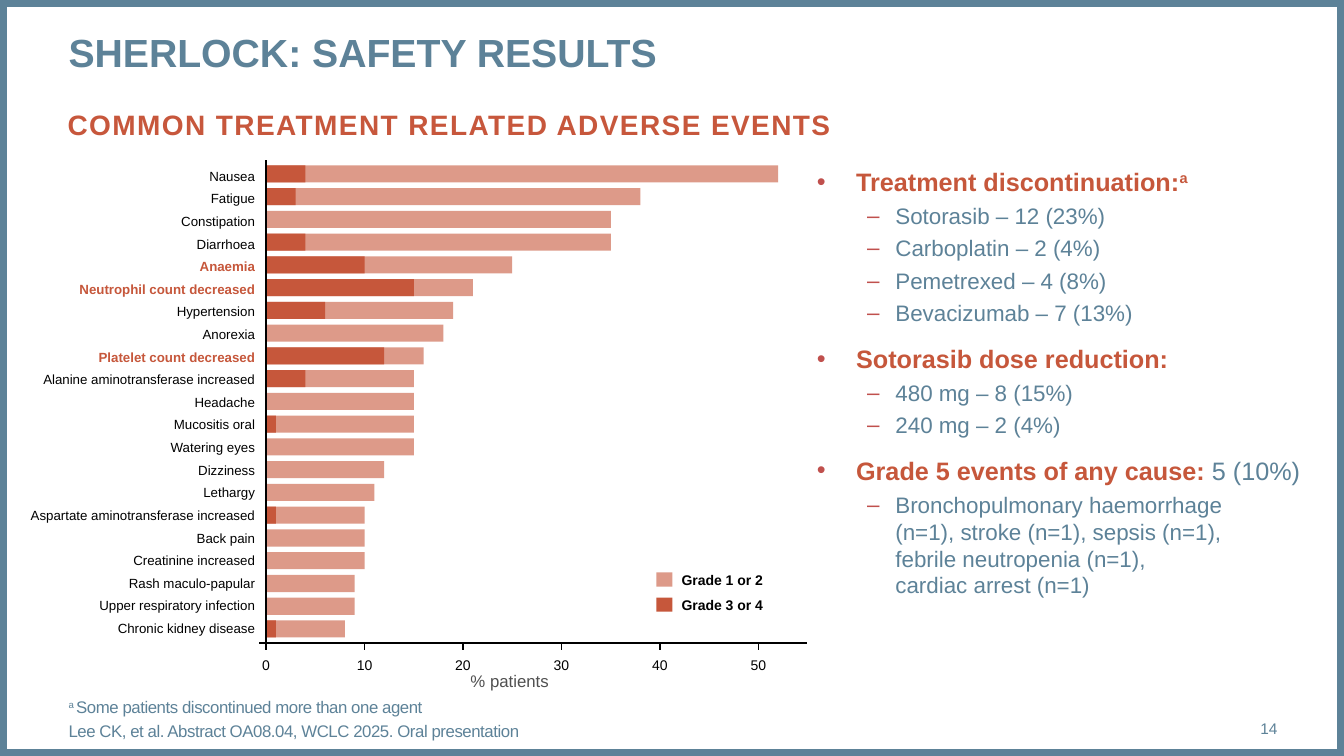
from lxml.etree import SubElement
from pptx import Presentation
from pptx.dml.color import RGBColor
from pptx.enum.shapes import MSO_CONNECTOR as Link, MSO_SHAPE as Shape
from pptx.enum.text import MSO_ANCHOR as Anchor, PP_ALIGN as Align
from pptx.oxml.ns import qn
from pptx.util import Inches, Pt

BLUE = RGBColor(0x5D, 0x82, 0x98)
RUST = RGBColor(0xC7, 0x57, 0x3C)
DARK = RGBColor(0xC6, 0x57, 0x3B)
PALE = RGBColor(0xDD, 0x9A, 0x89)
BLACK = RGBColor(0, 0, 0)
GREY = RGBColor(0x50, 0x50, 0x50)
BULLET = "C0504D"
FONT = "Arial"

# event, all grades, grade 3 or 4 (% of patients)
EVENTS = [
    ("Nausea", 52, 4),
    ("Fatigue", 38, 3),
    ("Constipation", 35, 0),
    ("Diarrhoea", 35, 4),
    ("Anaemia", 25, 10),
    ("Neutrophil count decreased", 21, 15),
    ("Hypertension", 19, 6),
    ("Anorexia", 18, 0),
    ("Platelet count decreased", 16, 12),
    ("Alanine aminotransferase increased", 15, 4),
    ("Headache", 15, 0),
    ("Mucositis oral", 15, 1),
    ("Watering eyes", 15, 0),
    ("Dizziness", 12, 0),
    ("Lethargy", 11, 0),
    ("Aspartate aminotransferase increased", 10, 1),
    ("Back pain", 10, 0),
    ("Creatinine increased", 10, 0),
    ("Rash maculo-papular", 9, 0),
    ("Upper respiratory infection", 9, 0),
    ("Chronic kidney disease", 8, 1),
]
SEVERE = 10  # events with at least this share of grade 3 or 4 stand out
GRADES = [("Grade 1 or 2", PALE), ("Grade 3 or 4", DARK)]
TICKS = range(0, 60, 10)

HEAD = {"size": 18, "color": DARK, "bold": True}
ITEM = {"size": 16, "color": BLUE}
NOTE = {"size": 12, "color": BLUE, "spc": -30}
POINTS = [
    ([("Treatment discontinuation:", HEAD), ("a", {**HEAD, "base": 30000})],
     ["Sotorasib – 12 (23%)", "Carboplatin – 2 (4%)", "Pemetrexed – 4 (8%)", "Bevacizumab – 7 (13%)"]),
    ([("Sotorasib dose reduction:", HEAD)],
     ["480 mg – 8 (15%)", "240 mg – 2 (4%)"]),
    ([("Grade 5 events of any cause: ", HEAD), ("5 (10%)", {"size": 18, "color": BLUE})],
     ["Bronchopulmonary haemorrhage\v(n=1), stroke (n=1), sepsis (n=1),\v"
      "febrile neutropenia (n=1),\vcardiac arrest (n=1)"]),
]
NOTES = [
    [("a ", {**NOTE, "base": 30000}), ("Some patients discontinued more than one agent", NOTE)],
    [("Lee CK, et al. Abstract OA08.04, WCLC 2025. Oral presentation", NOTE)],
]

# left, top, width, height in percent of the slide
TITLE = (5.1, 3.73, 89.9, 12.53)
SUB = (5.03, 14.27, 90, 10.27)
LIST = (60.77, 22, 36.23, 67.6)
FOOT = (5.1, 92.67, 83.5, 5.33)
PAGE = (88.6, 93.73, 6.45, 5.33)
NAMES = (2.18, 21.33, 16.8, 63.6)
UNIT = (34.21, 88, 7.43, 4)
# bars: zero line, width of one percent, first top, row step, height
ZERO, ONE, TOP, STEP, BAR = 19.8, 0.73, 21.87, 3.01, 2.27
ONE = 38.1 / 52
AXIS_Y, TICK_Y, NUM_Y = 85.07, 86, 86.8
AXIS_X, AXIS_END, AXIS_TOP = 19.28, 60.02, 21.2
DIGIT, LINE = 0.57, 2.8
KEY_X, KEY_Y, KEY_STEP = 48.84, 75.73, 3.33

prs = Presentation()
prs.slide_width, prs.slide_height = Inches(13.33), Inches(7.5)
slide = prs.slides.add_slide(prs.slide_layouts[6])
shapes = slide.shapes


def place(box):
    """Turn percent of the slide into lengths."""
    sizes = (prs.slide_width, prs.slide_height) * 2
    return [int(part * size / 100) for part, size in zip(box, sizes)]


def style(run, size, color, bold=False, base=None, spc=None):
    font = run.font
    font.name, font.size, font.bold = FONT, Pt(size), bold
    font.color.rgb = color
    props = run._r.get_or_add_rPr()
    for key, value in (("baseline", base), ("spc", spc)):
        if value is not None:
            props.set(key, str(value))


def add(kind, box, fill=None):
    """Add a preset shape without outline."""
    shape = shapes.add_shape(kind, *place(box))
    shape.shadow.inherit = False
    shape.line.fill.background()
    if fill is None:
        shape.fill.background()
    else:
        shape.fill.solid()
        shape.fill.fore_color.rgb = fill
    return shape


def write(box, lines, align=Align.LEFT, anchor=Anchor.TOP, label=False):
    """Add text; each line is a list of (text, style) pairs. A label does not wrap."""
    if label:
        shape = add(Shape.ROUNDED_RECTANGLE, box)
        shape.adjustments[0] = 0
    else:
        shape = shapes.add_textbox(*place(box))
    frame = shape.text_frame
    frame.word_wrap, frame.vertical_anchor = not label, anchor
    frame.margin_left = frame.margin_right = frame.margin_top = frame.margin_bottom = 0
    frame.text = "\n".join("".join(text for text, _ in line) for line in lines)
    for para, line in zip(frame.paragraphs, lines):
        para.alignment = align
        if len(line) > 1:
            para.text = ""
            for text, look in line:
                run = para.add_run()
                run.text = text
                style(run, **look)
        else:
            for run in para.runs:
                style(run, **line[0][1])
    return frame.paragraphs


def bullet(para, sign, left, hang, space):
    props = para._p.get_or_add_pPr()
    props.set("marL", str(Inches(left)))
    props.set("indent", str(-Inches(hang)))
    SubElement(SubElement(props, qn("a:buClr")), qn("a:srgbClr")).set("val", BULLET)
    SubElement(props, qn("a:buFont")).set("typeface", FONT)
    SubElement(props, qn("a:buChar")).set("char", sign)
    para.space_before = Pt(space)


def rule(*ends):
    line = shapes.add_connector(Link.STRAIGHT, *place(ends))
    line.line.color.rgb, line.line.width = BLACK, Pt(1)
    SubElement(line._element.spPr, qn("a:effectLst"))


border = add(Shape.RECTANGLE, (0, 0, 100, 100))
border.line.color.rgb, border.line.width = BLUE, Pt(10)
write(SUB, [[("COMMON TREATMENT RELATED ADVERSE EVENTS",
              {"size": 20, "color": RUST, "bold": True, "spc": 100})]])
write(TITLE, [[("SHERLOCK: SAFETY RESULTS", {"size": 28, "color": BLUE, "bold": True})]])

lines, levels = [], []
for head, items in POINTS:
    lines += [head] + [[(item, ITEM)] for item in items]
    levels += [0] + [1] * len(items)
for rank, (para, level) in enumerate(zip(write(LIST, lines), levels)):
    para.level = level
    if level:
        bullet(para, "–", 0.78, 0.28, 4)
    else:
        bullet(para, "•", 0.39, 0.39, 12 if rank else 0)

write(FOOT, NOTES, anchor=Anchor.BOTTOM)[1].space_before = Pt(3)
write(PAGE, [[("14", {"size": 11, "color": BLUE})]], Align.RIGHT, Anchor.MIDDLE)

names = [[(name, {"size": 9.5, "color": DARK if high >= SEVERE else BLACK, "bold": high >= SEVERE})]
         for name, _, high in EVENTS]
for para in write(NAMES, names, Align.RIGHT, label=True):
    para.line_spacing = 1.42

rule(AXIS_X, AXIS_Y, AXIS_END, AXIS_Y)
for tick in TICKS:
    x, wide = ZERO + tick * ONE, DIGIT * len(str(tick))
    write((x - wide / 2, NUM_Y, wide, LINE), [[(str(tick), {"size": 10, "color": BLACK})]],
          Align.CENTER, label=True)
    if tick:
        rule(x, AXIS_Y, x, TICK_Y)
for row, (_, total, high) in enumerate(EVENTS):
    for value, color in ((total, PALE), (high, DARK)):
        if value:
            add(Shape.RECTANGLE, (ZERO, TOP + row * STEP, value * ONE, BAR), color)
rule(ZERO, AXIS_TOP, ZERO, TICK_Y)

for rank, (label, color) in enumerate(GRADES):
    top = KEY_Y + rank * KEY_STEP
    write((KEY_X + 1.87, top - 0.13, 6.08, LINE),
          [[(label, {"size": 10, "color": BLACK, "bold": True})]], label=True)
    add(Shape.RECTANGLE, (KEY_X, top, 1.2, 1.87), color)
write(UNIT, [[("% patients", {"size": 12, "color": GREY})]], Align.CENTER, Anchor.MIDDLE)

prs.save("out.pptx")
